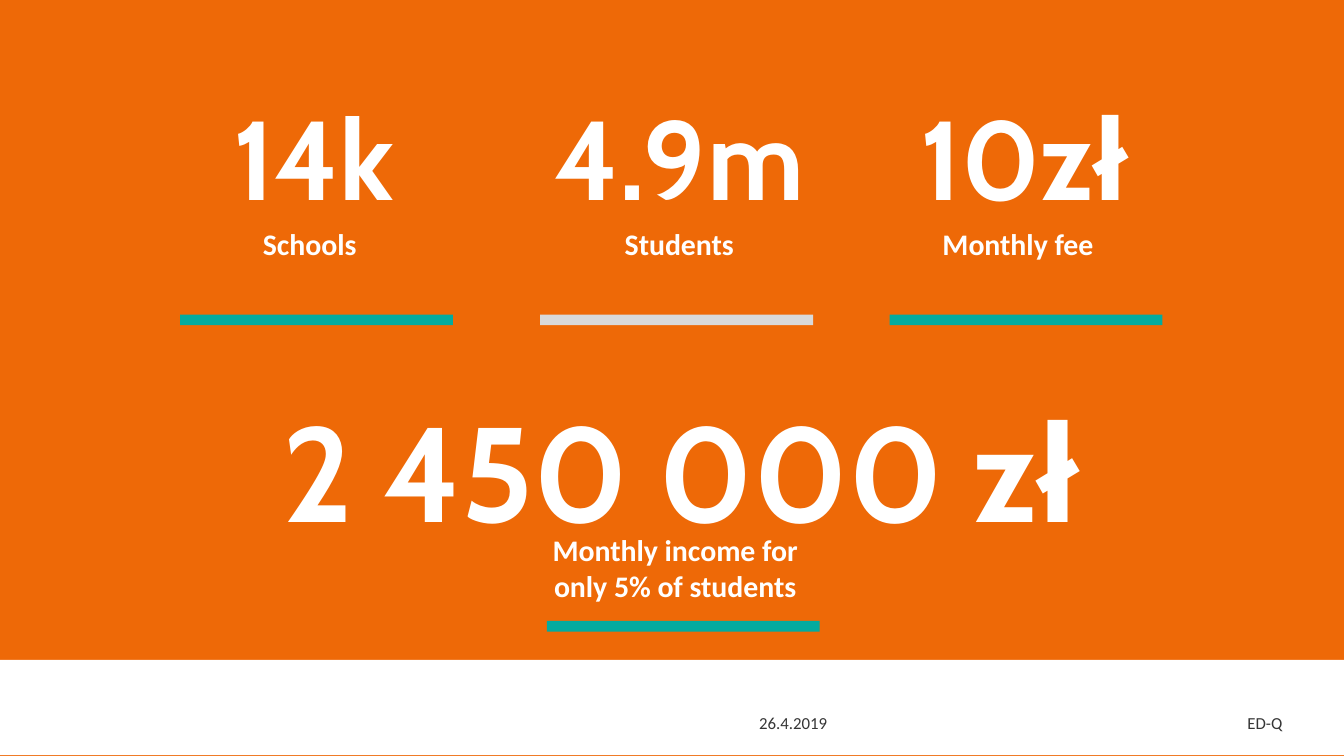
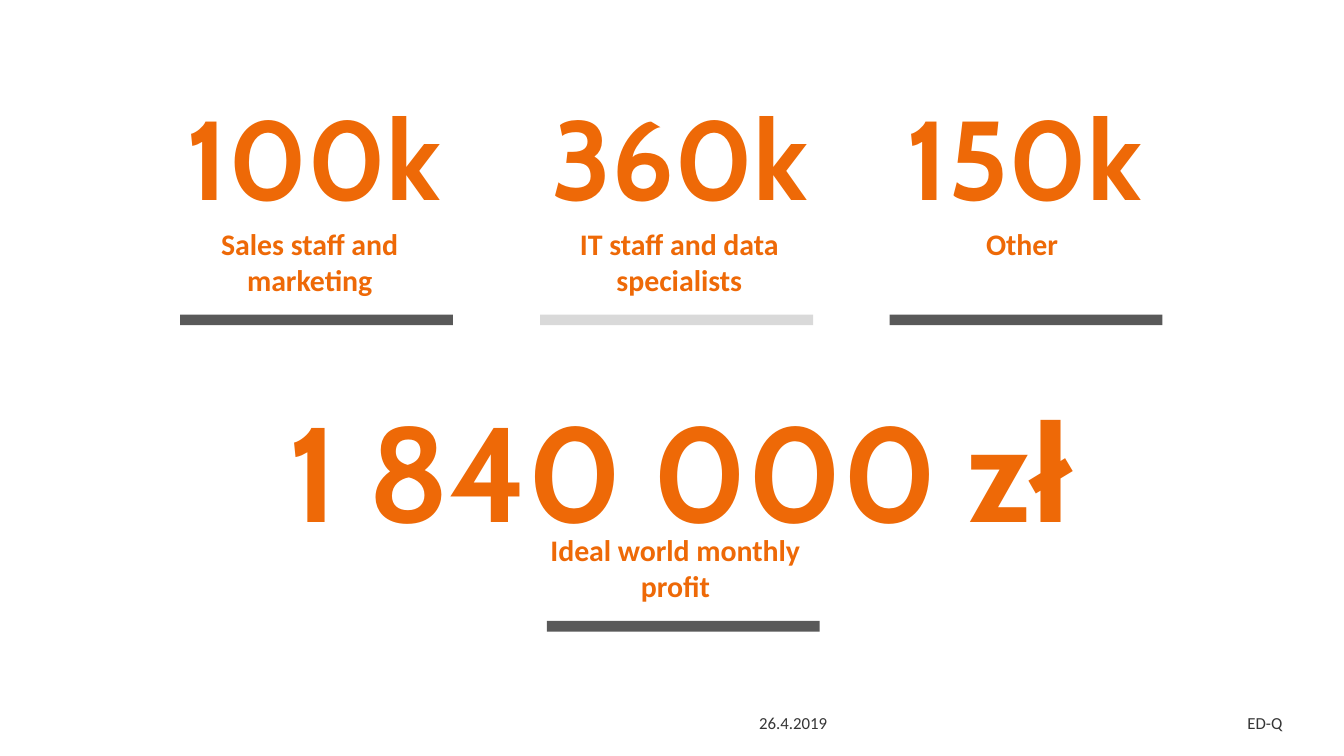
"""Build two key-figure slides: monthly income and monthly profit."""
from dataclasses import dataclass

from pptx import Presentation
from pptx.dml.color import RGBColor
from pptx.enum.shapes import MSO_SHAPE
from pptx.enum.text import MSO_ANCHOR, MSO_AUTO_SIZE, PP_ALIGN
from pptx.util import Inches, Pt

RECTANGLE = MSO_SHAPE.RECTANGLE
TOP, MIDDLE, BOTTOM = MSO_ANCHOR.TOP, MSO_ANCHOR.MIDDLE, MSO_ANCHOR.BOTTOM
LEFT, CENTER, RIGHT = PP_ALIGN.LEFT, PP_ALIGN.CENTER, PP_ALIGN.RIGHT
NO_AUTOFIT = MSO_AUTO_SIZE.NONE
TITLE_ONLY = 5
SLIDE_WIDTH = Inches(10)
SLIDE_HEIGHT = SLIDE_WIDTH * 9 // 16


@dataclass(frozen=True)
class Theme:
    """Colours, fonts and type sizes."""
    orange: str = "EE6907"
    teal: str = "03AB9F"
    dark_grey: str = "595959"
    light_grey: str = "D9D9D9"
    white: str = "FFFFFF"
    footer_text: str = "363636"
    number_font: str = "Cabin"
    text_font: str = "Calibri"
    total_size: int = 72
    number_size: int = 60
    label_size: int = 16
    footer_size: int = 9


THEME = Theme()


@dataclass(frozen=True)
class Box:
    """A rectangle on the slide, in inches."""
    left: float
    top: float
    width: float
    height: float

    def lengths(self) -> tuple:
        """Return the four values as lengths."""
        return tuple(Inches(value) for value in (self.left, self.top, self.width, self.height))


@dataclass(frozen=True)
class TextStyle:
    """The look of a line of text."""
    font: str
    size: int
    color: str
    bold: bool = True
    align: PP_ALIGN = CENTER
    anchor: MSO_ANCHOR = TOP


@dataclass(frozen=True)
class Metric:
    """A number with its label, and the places of its parts."""
    number: str
    label: str
    number_left: float
    number_width: float
    label_left: float
    bar_left: float


@dataclass(frozen=True)
class FigureSlide:
    """The content and colours of one slide."""
    background: str
    text_color: str
    accent: str
    metrics: tuple[Metric, ...]
    total: str
    total_label: str


FIGURE_SLIDES = (
    FigureSlide(
        THEME.orange, THEME.white, THEME.teal,
        (
            Metric("14k", "Schools", 1.34, 1.99, 1.27, 1.34),
            Metric("4.9m", "Students", 3.77, 2.57, 4.02, 4.02),
            Metric("10zł", "Monthly fee", 6.29, 2.66, 6.54, 6.62),
        ),
        "2 450 000 zł", "Monthly income for only 5% of students",
    ),
    FigureSlide(
        THEME.white, THEME.orange, THEME.dark_grey,
        (
            Metric("100k", "Sales staff and marketing", 0.99, 2.69, 1.27, 1.34),
            Metric("360k", "IT staff and data specialists", 3.77, 2.57, 4.02, 4.02),
            Metric("150k", "Other", 6.29, 2.66, 6.57, 6.62),
        ),
        "1 840 000 zł", "Ideal world monthly profit",
    ),
)


def write_text(shape, text: str, style: TextStyle) -> None:
    """Put one styled run into a text shape."""
    frame = shape.text_frame
    frame.word_wrap = True
    frame.auto_size = NO_AUTOFIT
    frame.vertical_anchor = style.anchor
    frame.margin_left = frame.margin_right = Inches(0.1)
    frame.margin_top = frame.margin_bottom = Inches(0.05)
    paragraph = frame.paragraphs[0]
    paragraph.alignment = style.align
    run = paragraph.add_run()
    run.text = text
    run.font.name = style.font
    run.font.size = Pt(style.size)
    run.font.bold = style.bold
    run.font.color.rgb = RGBColor.from_string(style.color)


def add_text(slide, box: Box, text: str, style: TextStyle) -> None:
    """Add a text box."""
    write_text(slide.shapes.add_textbox(*box.lengths()), text, style)


def add_rectangle(slide, box: Box, color: str) -> None:
    """Add a plain filled rectangle."""
    shape = slide.shapes.add_shape(RECTANGLE, *box.lengths())
    shape.shadow.inherit = False
    shape.fill.solid()
    shape.fill.fore_color.rgb = RGBColor.from_string(color)
    shape.line.fill.background()


def add_label_and_bar(slide, label: str, label_left: float, bar_left: float,
                      bar_top: float, style: TextStyle, bar_color: str) -> None:
    """Add a label that stands on a coloured bar."""
    height = 0.71
    add_text(slide, Box(label_left, bar_top - height, 2.07, height), label, style)
    add_rectangle(slide, Box(bar_left, bar_top, 2.03, 0.08), bar_color)


def add_footer(slide) -> None:
    """Add the white band with the date and the project name."""
    add_rectangle(slide, Box(0, 4.91, 10, 0.71), THEME.white)
    for text, left, width, align in (("ED-Q", 6.81, 2.83, RIGHT), ("26.4.2019", 5.55, 1.02, LEFT)):
        style = TextStyle(THEME.text_font, THEME.footer_size, THEME.footer_text,
                          bold=False, align=align, anchor=MIDDLE)
        add_text(slide, Box(left, 5.23, width, 0.3), text, style)


def add_total(slide, text: str, style: TextStyle) -> None:
    """Place the total in the title placeholder."""
    title = slide.shapes.title
    title.left, title.top, title.width, title.height = Box(0.95, 2.64, 8.22, 1.5).lengths()
    write_text(title, text, style)


def add_figure_slide(presentation, content: FigureSlide) -> None:
    """Add one slide of three metrics and a total."""
    slide = presentation.slides.add_slide(presentation.slide_layouts[TITLE_ONLY])
    slide.background.fill.solid()
    slide.background.fill.fore_color.rgb = RGBColor.from_string(content.background)
    number_style = TextStyle(THEME.number_font, THEME.number_size, content.text_color, anchor=BOTTOM)
    total_style = TextStyle(THEME.number_font, THEME.total_size, content.text_color, anchor=BOTTOM)
    label_style = TextStyle(THEME.text_font, THEME.label_size, content.text_color)

    add_footer(slide)
    bar_colors = (content.accent, THEME.light_grey, content.accent)
    for metric, bar_color in zip(content.metrics, bar_colors):
        number_box = Box(metric.number_left, 0.21, metric.number_width, 1.5)
        add_text(slide, number_box, metric.number, number_style)
        add_label_and_bar(slide, metric.label, metric.label_left, metric.bar_left,
                          2.34, label_style, bar_color)
    add_total(slide, content.total, total_style)
    add_label_and_bar(slide, content.total_label, 3.99, 4.07, 4.62, label_style, content.accent)


def main() -> None:
    """Build and save the presentation."""
    presentation = Presentation()
    presentation.slide_width = SLIDE_WIDTH
    presentation.slide_height = SLIDE_HEIGHT
    for content in FIGURE_SLIDES:
        add_figure_slide(presentation, content)
    presentation.save("out.pptx")


if __name__ == "__main__":
    main()
